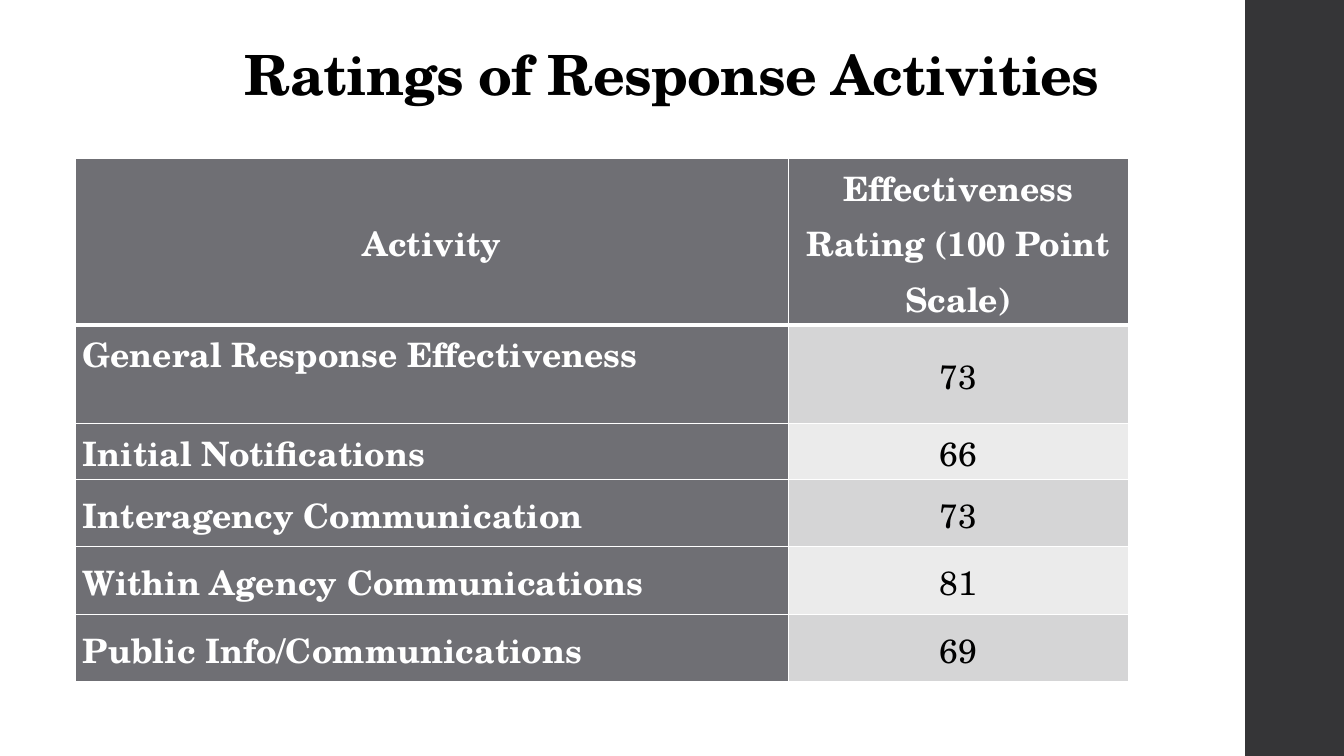
import dataclasses

import lxml.etree
import pptx
import pptx.dml.color
import pptx.enum.shapes
import pptx.enum.text
import pptx.oxml.ns
import pptx.util

Inches = pptx.util.Inches
Align = pptx.enum.text.PP_ALIGN
Anchor = pptx.enum.text.MSO_ANCHOR
qn = pptx.oxml.ns.qn


@dataclasses.dataclass(frozen=True)
class Theme:
    font: str = "TeX Gyre Schola"
    dark: str = "353537"
    gray: str = "6F6F74"
    bands: tuple = ("D5D5D6", "EBEBEB")
    white: str = "FFFFFF"
    black: str = "000000"
    title: float = 39.6
    body: float = 24


THEME = Theme()
WIDE, HIGH = 13.33, 7.5
COLS = (7.07, 3.37)
ROWS = (1.27, 0.85, 0.42, 0.67, 0.67, 0.67)
HEAD = ("Activity", "Effectiveness Rating (100 Point Scale)")
RATINGS = (
    ("General Response Effectiveness", 73),
    ("Initial Notifications", 66),
    ("Interagency Communication", 73),
    ("Within Agency Communications", 81),
    ("Public Info/Communications", 69),
)


def tint(name):
    return pptx.dml.color.RGBColor.from_string(name)


def paint(fill, color):
    fill.solid()
    fill.fore_color.rgb = tint(color)


def write(frame, text, size=THEME.body, color=THEME.white, bold=True,
          align=Align.CENTER, line=1.07, track=0):
    para = frame.paragraphs[0]
    para.alignment = align
    para.line_spacing = line
    run = para.add_run()
    run.text = text
    font = run.font
    font.name, font.size, font.bold = THEME.font, pptx.util.Pt(size), bold
    font.color.rgb = tint(color)
    if track:
        run._r.get_or_add_rPr().set("spc", str(round(track * 100)))


def edge(cell, base=1):
    """Draw white cell borders, the bottom one base points wide."""
    props = cell._tc.get_or_add_tcPr()
    sides = {"lnL": 1, "lnR": 1, "lnT": 1, "lnB": base}
    for spot, (side, width) in enumerate(sides.items()):
        line = lxml.etree.Element(qn(f"a:{side}"), w=str(pptx.util.Pt(width)))
        fill = lxml.etree.SubElement(line, qn("a:solidFill"))
        lxml.etree.SubElement(fill, qn("a:srgbClr"), val=THEME.white)
        props.insert(spot, line)


def fill_cell(cell, text, back, base=1, **style):
    cell.vertical_anchor = Anchor.MIDDLE
    cell.margin_left = cell.margin_right = Inches(0.07)
    cell.margin_top = cell.margin_bottom = 0
    paint(cell.fill, back)
    edge(cell, base)
    write(cell.text_frame, text, **style)


def add_bar(slide):
    left = WIDE - 0.98
    bar = slide.shapes.add_shape(
        pptx.enum.shapes.MSO_SHAPE.RECTANGLE,
        Inches(left), 0, Inches(WIDE - left), Inches(HIGH))
    bar.shadow.inherit = False
    paint(bar.fill, THEME.dark)
    bar.line.fill.background()


def set_title(slide, text):
    title = slide.shapes.title
    title.left, title.top = Inches(0.92), Inches(0.4)
    title.width, title.height = Inches(11.5), Inches(0.72)
    frame = title.text_frame
    frame.auto_size = pptx.enum.text.MSO_AUTO_SIZE.NONE
    frame.word_wrap = True
    frame.vertical_anchor = Anchor.BOTTOM
    write(frame, text, size=THEME.title, color=THEME.black, line=0.9,
          track=-0.5)


def add_grid(slide):
    grid = slide.shapes.add_table(
        len(ROWS), len(COLS), Inches(0.75), Inches(1.57),
        Inches(sum(COLS)), Inches(sum(ROWS))).table
    for col, width in zip(grid.columns, COLS):
        col.width = Inches(width)
    for row, height in zip(grid.rows, ROWS):
        row.height = Inches(height)
    for col, text in enumerate(HEAD):
        fill_cell(grid.cell(0, col), text, THEME.gray, base=3)
    for row, (name, score) in enumerate(RATINGS, 1):
        fill_cell(grid.cell(row, 0), name, THEME.gray, align=Align.LEFT)
        fill_cell(grid.cell(row, 1), str(score), THEME.bands[(row - 1) % 2],
                  color=THEME.black, bold=False)
    grid.cell(1, 0).margin_bottom = Inches(0.43)


def main():
    deck = pptx.Presentation()
    deck.slide_width, deck.slide_height = Inches(WIDE), Inches(HIGH)
    slide = deck.slides.add_slide(deck.slide_layouts.get_by_name("Title Only"))
    add_bar(slide)
    set_title(slide, "Ratings of Response Activities")
    add_grid(slide)
    deck.save("out.pptx")


if __name__ == "__main__":
    main()
